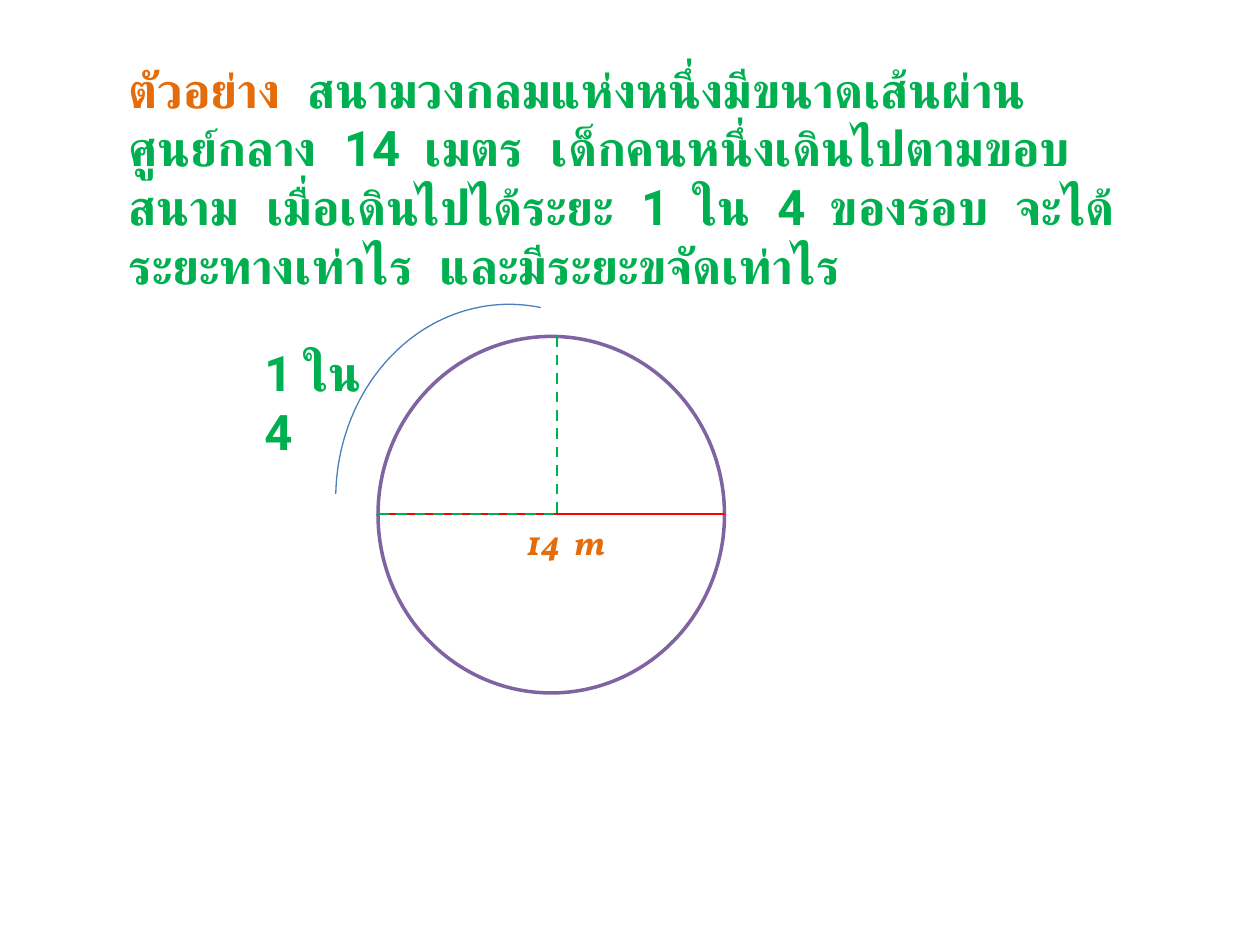
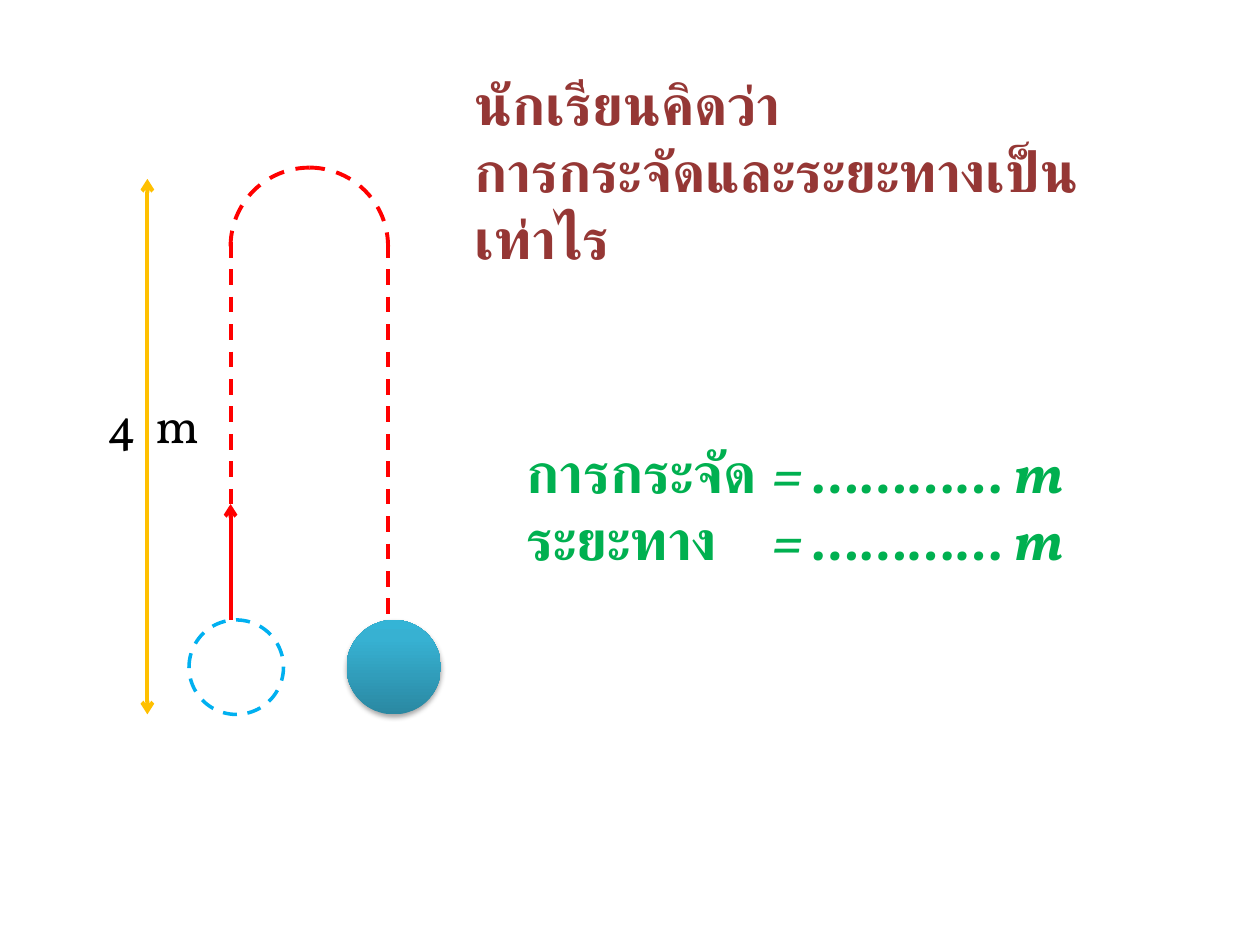
from lxml.etree import SubElement
from pptx import Presentation
from pptx.dml.color import RGBColor
from pptx.enum.dml import MSO_LINE as Dash
from pptx.enum.shapes import MSO_CONNECTOR as Connector, MSO_SHAPE as Shape
from pptx.enum.text import MSO_AUTO_SIZE as AutoSize
from pptx.oxml.ns import qn
from pptx.util import Inches, Pt

COLORS = {
    "white": "FFFFFF", "black": "000000", "orange": "E46C0A", "green": "00B050",
    "purple": "8064A2", "red": "FF0000", "blue": "4B7EBC", "brown": "953735",
    "sky": "00B0F0", "amber": "FFC000",
}
BALL_GRADIENT = [(0, "2A88A2"), (80, "37B1D2"), (100, "34B4D6")]
THAI, LATIN, BODY = "Roboto", "Vollkorn", "Calibri"


def rgb(name):
    return RGBColor.from_string(COLORS[name])


def add_run(paragraph, text, size=28, font=THAI, color="green", bold=True, italic=False):
    run = paragraph.add_run()
    run.text = text
    run.font.size = Pt(size)
    run.font.name = font
    run.font.bold = bold
    run.font.italic = italic
    run.font.color.rgb = rgb(color)


def add_text(slide, box, *lines, tab=None, **style):
    """Each line is a string or a list of (text, overrides of style)."""
    frame = slide.shapes.add_textbox(*map(Inches, box)).text_frame
    frame.word_wrap = True
    frame.auto_size = AutoSize.SHAPE_TO_FIT_TEXT
    for number, line in enumerate(lines):
        paragraph = frame.add_paragraph() if number else frame.paragraphs[0]
        if tab:
            tabs = SubElement(paragraph._p.get_or_add_pPr(), qn("a:tabLst"))
            SubElement(tabs, qn("a:tab"), pos=str(Inches(tab)), algn="l")
        for text, changes in [(line, {})] if isinstance(line, str) else line:
            add_run(paragraph, text, **{**style, **changes})


def style_line(line, color, width, dashed=False):
    line.color.rgb = rgb(color)
    line.width = Pt(width)
    if dashed:
        line.dash_style = Dash.DASH


def add_line(slide, start, end, color, width, dashed=False, arrows=()):
    """arrows holds headEnd for the start and tailEnd for the end."""
    line = slide.shapes.add_connector(Connector.STRAIGHT, *map(Inches, (*start, *end)))
    style_line(line.line, color, width, dashed)
    for arrow in arrows:
        SubElement(line.line._get_or_add_ln(), qn(f"a:{arrow}"), type="arrow")
    SubElement(line._element.spPr, qn("a:effectLst"))


def add_outline(slide, kind, box, color, width, dashed=False, fill=None,
                rotation=0, angles=()):
    outline = slide.shapes.add_shape(kind, *map(Inches, box))
    outline.shadow.inherit = False
    outline.rotation = rotation
    for index, angle in enumerate(angles):
        outline.adjustments[index] = angle * 0.6  # degrees to adjustment units
    if fill:
        outline.fill.solid()
        outline.fill.fore_color.rgb = rgb(fill)
    else:
        outline.fill.background()
    style_line(outline.line, color, width, dashed)


def add_ball(slide, box):
    ball = slide.shapes.add_shape(Shape.OVAL, *map(Inches, box))
    ball.line.fill.background()
    ball.fill.gradient()
    ball.fill.gradient_angle = 90
    properties = ball._element.spPr
    stops = properties.find(qn("a:gradFill")).find(qn("a:gsLst"))
    stops.clear()
    for percent, color in BALL_GRADIENT:
        stop = SubElement(stops, qn("a:gs"), pos=str(percent * 1000))
        SubElement(stop, qn("a:srgbClr"), val=color)
    ball.shadow.inherit = False
    shadow = SubElement(properties.find(qn("a:effectLst")), qn("a:outerShdw"),
                        blurRad=str(Pt(3.1)), dist=str(Pt(1.8)), dir="5400000",
                        rotWithShape="0")
    shade = SubElement(shadow, qn("a:srgbClr"), val=COLORS["black"])
    SubElement(shade, qn("a:alpha"), val="35000")


def build_round_field(slide):
    left, right, top, middle = 3, 5.75, 2.67, 4.08
    center = (4.42, middle)
    add_text(slide, (0.92, 0.42, 8.08, 1.51), [
        ("ตัวอย่าง  ", {"color": "orange"}),
        ("สนามวงกลมแห่งหนึ่งมีขนาดเส้นผ่านศูนย์กลาง  14  เมตร  "
         "เด็กคนหนึ่งเดินไปตามขอบสนาม  เมื่อเดินไปได้ระยะ  1  ใน  4  ของรอบ  "
         "จะได้ระยะทางเท่าไร  และมีระยะขจัดเท่าไร", {}),
    ])
    add_outline(slide, Shape.OVAL, (left, top, right - left, 2.83), "purple", 2, fill="white")
    add_line(slide, (left, middle), (right, middle), "red", 1)
    add_text(slide, (4.08, middle, 1.25, 0.44), "14  m",
             size=20, font=LATIN, color="orange", italic=True)
    for rim in ((center[0], top), (left, middle)):
        add_line(slide, rim, center, "green", 1.5, dashed=True)
    add_text(slide, (2, top, 1.08, 0.57), "1 ใน 4")
    add_outline(slide, Shape.ARC, (2.5, 2.58, 3.08, 2.75), "blue", 0.75,
                rotation=270, angles=(271.44, 9.44))


def build_ball_track(slide):
    left, right, bend, ground = 1.83, 3.08, 1.92, 4.92
    ball_size = 0.75
    track = {"color": "red", "width": 2.25}
    add_text(slide, (3.67, 0.5, 5.25, 1.18), "นักเรียนคิดว่า",
             "การกระจัดและระยะทางเป็นเท่าไร", size=32, color="brown")
    add_outline(slide, Shape.OVAL, (1.5, ground, ball_size, ball_size), "sky", 2,
                dashed=True, fill="white")
    add_ball(slide, (2.75, ground, ball_size, ball_size))
    add_line(slide, (1.17, 1.42), (1.17, ground + ball_size), "amber", 2.25,
             arrows=("headEnd", "tailEnd"))
    for x in (left, right):
        add_line(slide, (x, bend), (x, ground), dashed=True, **track)
    for rotation in (270, 0):
        add_outline(slide, Shape.ARC, (left, 1.33, right - left, right - left),
                    dashed=True, rotation=rotation, **track)
    add_line(slide, (left, ground), (left, 4), arrows=("tailEnd",), **track)
    blank = ("\t= ………… m", {"font": LATIN, "italic": True})
    add_text(slide, (4.08, 3.42, 4.58, 1.18),
             *([(quantity, {}), blank] for quantity in ("การกระจัด", "ระยะทาง")),
             tab=1.95, size=32, font=BODY)
    add_text(slide, (0.75, 3.08, 1.08, 0.57), "4  m",
             font=LATIN, color="black", bold=False)


def main():
    deck = Presentation()
    deck.slide_width, deck.slide_height = Inches(10), Inches(7.5)
    for build in (build_round_field, build_ball_track):
        build(deck.slides.add_slide(deck.slide_layouts[6]))
    deck.save("out.pptx")


if __name__ == "__main__":
    main()
